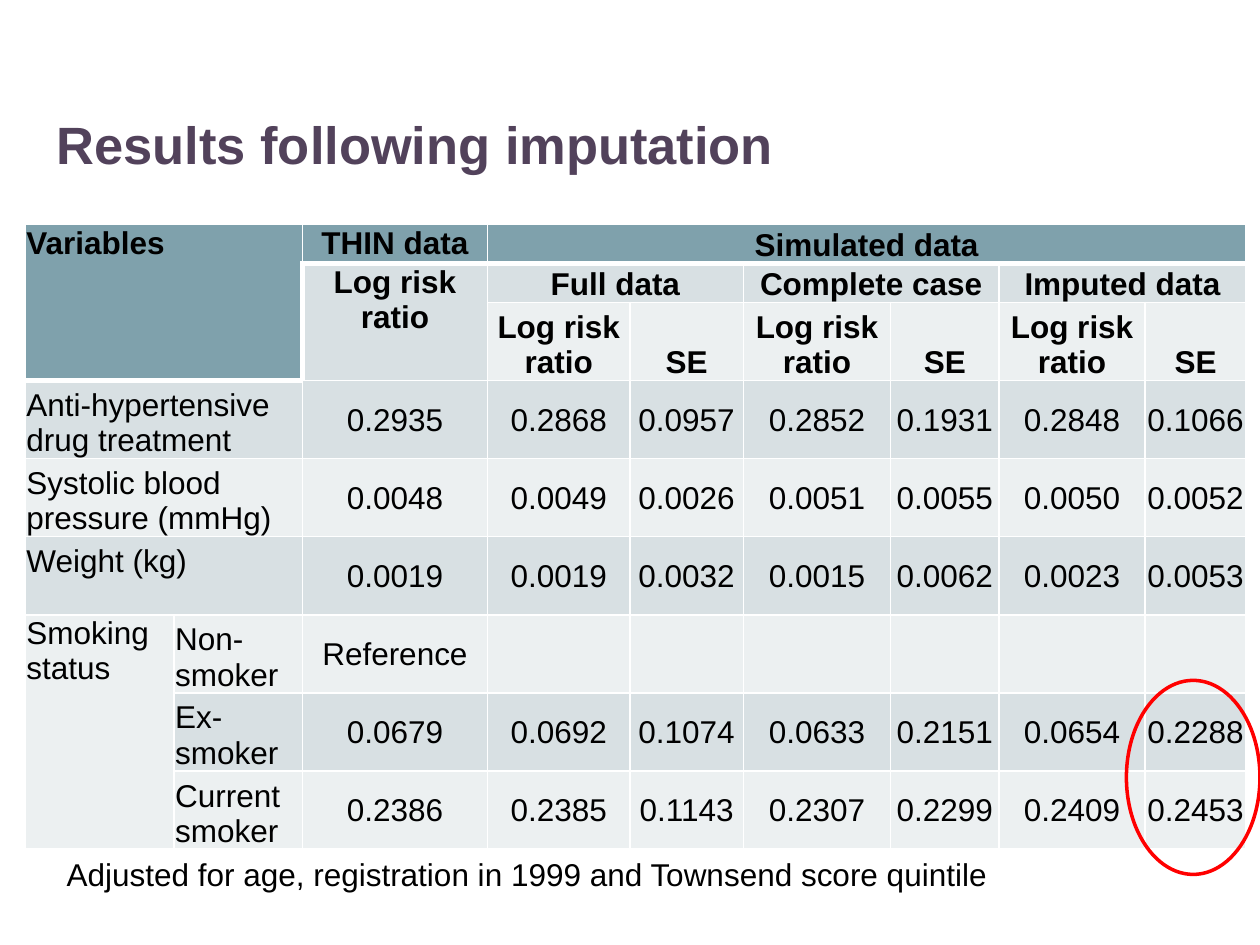
import pptx
import pptx.util
import pptx.dml.color
import pptx.enum.shapes
import pptx.enum.text
import pptx.oxml
import pptx.oxml.ns

Inches = pptx.util.Inches
Pt = pptx.util.Pt
ALIGN = pptx.enum.text.PP_ALIGN
ANCHOR = pptx.enum.text.MSO_ANCHOR

WIDTHS = [1.18, 1.02, 1.47, 1.13, 0.9, 1.17, 0.86, 1.16, 0.8]
HEIGHTS = [0.31, 0.31, 0.62] + [0.62] * 6
ROWS = [
    ["Variables", "", "THIN data", "Simulated data", "", "", "", "", ""],
    ["", "", "Log risk ratio", "Full data", "", "Complete case", "", "Imputed data", ""],
    ["", "", ""] + ["Log risk ratio", "SE"] * 3,
    ["Anti-hypertensive drug treatment", "", "0.2935", "0.2868", "0.0957",
     "0.2852", "0.1931", "0.2848", "0.1066"],
    ["Systolic blood pressure (mmHg)", "", "0.0048", "0.0049", "0.0026",
     "0.0051", "0.0055", "0.0050", "0.0052"],
    ["Weight (kg)", "", "0.0019", "0.0019", "0.0032",
     "0.0015", "0.0062", "0.0023", "0.0053"],
    ["Smoking status", "Non-smoker", "Reference", "", "", "", "", "", ""],
    ["", "Ex-smoker", "0.0679", "0.0692", "0.1074",
     "0.0633", "0.2151", "0.0654", "0.2288"],
    ["", "Current smoker", "0.2386", "0.2385", "0.1143",
     "0.2307", "0.2299", "0.2409", "0.2453"],
]
SPANS = [
    (0, 0, 2, 1), (0, 3, 0, 8), (1, 2, 2, 2),
    (1, 3, 1, 4), (1, 5, 1, 6), (1, 7, 1, 8),
    (3, 0, 3, 1), (4, 0, 4, 1), (5, 0, 5, 1), (6, 0, 8, 0),
]
TOP = {(0, 0), (0, 2), (1, 2), (5, 0), (6, 0)}


def color(code):
    return pptx.dml.color.RGBColor.from_string(code)


def write(frame, text, size=18, ink="000000", bold=False, align=ALIGN.LEFT):
    frame.word_wrap = True
    para = frame.paragraphs[0]
    para.alignment = align
    run = para.add_run()
    run.text = text
    font = run.font
    font.name = "Arial"
    font.size = Pt(size)
    font.bold = bold
    font.color.rgb = color(ink)


def add_text(slide, box, text, **style):
    shape = slide.shapes.add_textbox(*map(Inches, box))
    write(shape.text_frame, text, **style)


def set_edges(cell, widths):
    props = cell._tc.get_or_add_tcPr()
    space = pptx.oxml.ns.nsdecls("a")
    for side, width in widths.items():
        props.append(pptx.oxml.parse_xml(
            f'<a:ln{side} {space} w="{Pt(width)}"><a:solidFill>'
            f'<a:srgbClr val="FFFFFF"/></a:solidFill></a:ln{side}>'))


def format_cell(cell, row, col, text):
    label = col < 2
    head = row == 0 or (label and row < 3)
    last = 2 if label else 0
    set_edges(cell, {
        "L": 3 if col == 2 and row in (1, 2) else 1,
        "R": 1,
        "T": 3 if row == last + 1 else 1,
        "B": 3 if row == last or (row, col) == (0, 0) else 1,
    })
    cell.fill.solid()
    cell.fill.fore_color.rgb = color(
        "7FA1AC" if head else "D8E0E3" if row % 2 else "ECF0F1")
    cell.margin_left = cell.margin_right = Inches(0.01)
    cell.margin_top = Inches(0.06 if text == "Weight (kg)" else 0.01)
    cell.margin_bottom = 0
    if (row, col) in TOP:
        cell.vertical_anchor = ANCHOR.TOP
    elif row > 2 and not label:
        cell.vertical_anchor = ANCHOR.MIDDLE
    else:
        cell.vertical_anchor = ANCHOR.BOTTOM
    if text:
        write(cell.text_frame, text, bold=row < 3,
              align=ALIGN.LEFT if label else ALIGN.CENTER)


def add_results(slide, box):
    frame = slide.shapes.add_table(len(ROWS), len(WIDTHS), *map(Inches, box))
    table = frame.table
    for column, width in zip(table.columns, WIDTHS):
        column.width = Inches(width)
    for line, height in zip(table.rows, HEIGHTS):
        line.height = Inches(height)
    for row, values in enumerate(ROWS):
        for col, text in enumerate(values):
            format_cell(table.cell(row, col), row, col, text)
    for top, left, bottom, right in SPANS:
        table.cell(top, left).merge(table.cell(bottom, right))


def add_ring(slide, box):
    ring = slide.shapes.add_shape(
        pptx.enum.shapes.MSO_SHAPE.OVAL, *map(Inches, box))
    ring.shadow.inherit = False
    ring.fill.background()
    ring.line.color.rgb = color("FF0000")
    ring.line.width = Pt(2)


def main():
    deck = pptx.Presentation()
    deck.slide_width = Inches(10)
    deck.slide_height = Inches(7.5)
    slide = deck.slides.add_slide(deck.slide_layouts[6])
    add_text(slide, (0.35, 0.84, 9.28, 1.18), "Results following imputation",
             size=30, ink="52425B", bold=True)
    add_results(slide, (0.2, 1.78, 9.69, 4.96))
    add_text(slide, (0.43, 6.74, 7.95, 0.4),
             "Adjusted for age, registration in 1999 and Townsend score quintile")
    add_ring(slide, (8.94, 5.4, 1.06, 1.54))
    deck.save("out.pptx")


if __name__ == "__main__":
    main()
